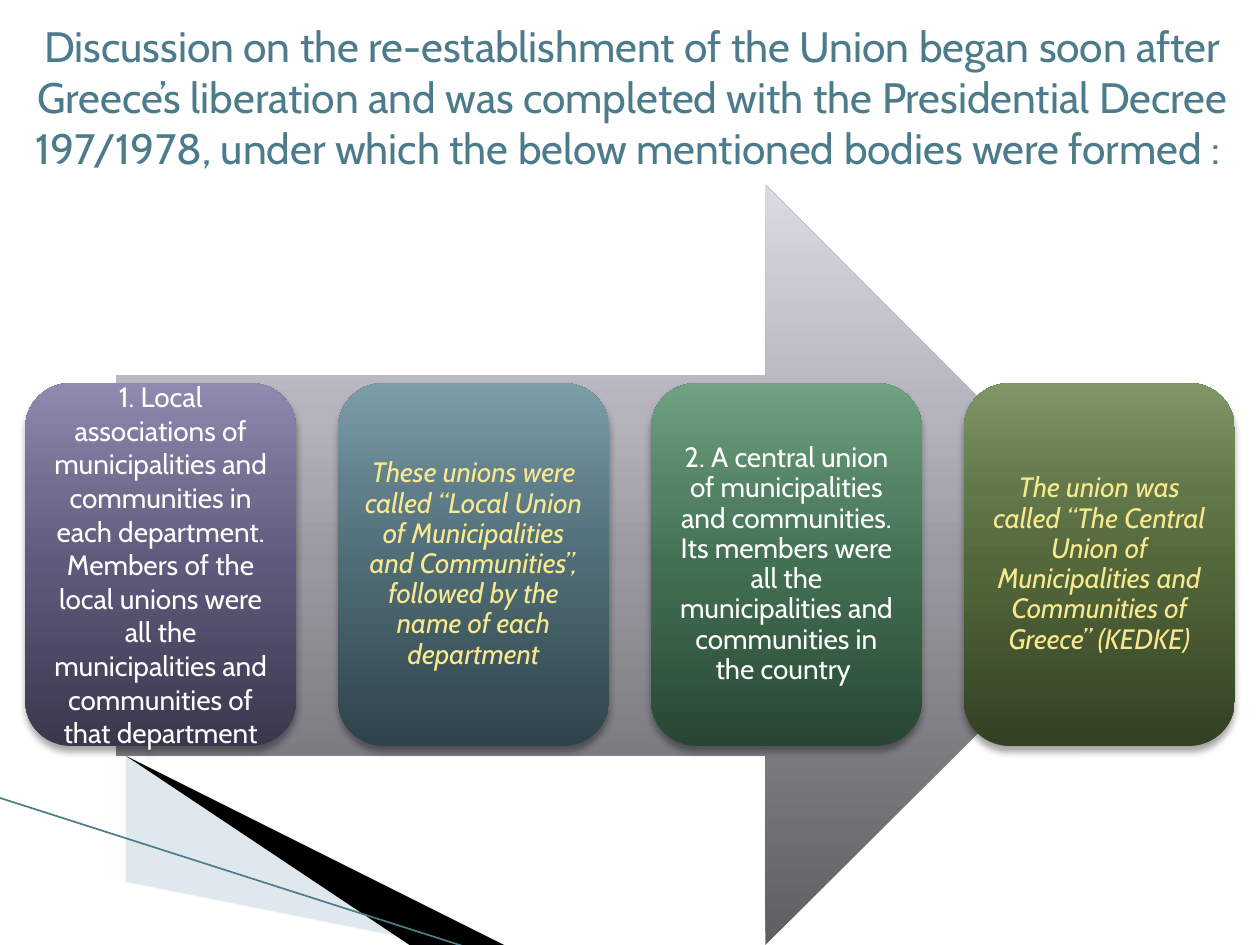
from lxml import etree
from pptx import Presentation
from pptx.dml.color import RGBColor
from pptx.enum import shapes, text
from pptx.oxml import ns
from pptx.util import Inches, Pt

FONT = "Cabin"
TITLE = ("Discussion on the re-establishment of the Union began soon after "
         "Greece’s liberation and was completed with the Presidential Decree "
         "197/1978, under which the below mentioned bodies were formed : ")
STOPS = (0, 50, 70, 100)
ARROW_COLOURS = ("5F5E63", "9998A0", "B5B3BC", "DBDAE4")
WHITE, YELLOW = "FFFFFF", "F9E98E"
# text, text colour, italic, line spacing, gradient colours from bottom to top
CARDS = [
    ("1. Local associations of municipalities and communities in each department. "
     "Members of the local unions were all the municipalities and communities of "
     "that department",
     WHITE, False, 1.0, ("3A374D", "5F5A7B", "726D8F", "908AB0")),
    ("These unions were called “Local Union of Municipalities and Communities”, "
     "followed by the name of each department",
     YELLOW, True, 0.9, ("30434A", "4E6C75", "607E89", "7C9EA9")),
    ("2. A central union of municipalities and communities. Its members were all "
     "the municipalities and communities in the country ",
     WHITE, False, 0.9, ("284633", "427053", "538264", "6FA280")),
    ("The union was called “The Central Union of Municipalities and Communities "
     "of Greece” (KEDKE)",
     YELLOW, True, 0.9, ("334124", "53673B", "63784A", "7F9666")),
]
CARD_LEFT, CARD_TOP, CARD_WIDTH, CARD_HEIGHT = 0.2, 3.04, 2.15, 2.88
CARDS_RIGHT = 9.8
# points, colour, opacity in percent
WEDGES = [
    ([(0.55, 6.51), (5.95, 7.51), (4.56, 7.51), (0.55, 6.5)], "B1C9D2", 40),
    ([(0.53, 6.49), (4.57, 7.51), (3.72, 7.52), (0.54, 6.5)], "000000", 100),
]


def rgb(colour):
    return RGBColor.from_string(colour)


def add_element(parent, tag, **attributes):
    child = etree.SubElement(parent, ns.qn(tag))
    for name, value in attributes.items():
        child.set(name, str(value))
    return child


def fill_gradient(shape, colours):
    """Fill with a gradient running from the bottom to the top."""
    shape.fill.gradient()
    shape.fill.gradient_angle = 90
    stop_list = shape.fill._fill._gradFill.find(ns.qn("a:gsLst"))
    for stop in list(stop_list):
        stop_list.remove(stop)
    for position, colour in zip(STOPS, colours):
        stop = add_element(stop_list, "a:gs", pos=position * 1000)
        add_element(stop, "a:srgbClr", val=colour)
    shape.line.fill.background()
    shape.shadow.inherit = False


def add_shadow(shape):
    effects = shape._element.spPr.find(ns.qn("a:effectLst"))
    shadow = add_element(effects, "a:outerShdw", blurRad=Pt(4), dist=Pt(3),
                         dir=90 * 60000, rotWithShape=0)
    colour = add_element(shadow, "a:srgbClr", val="000000")
    add_element(colour, "a:alpha", val=35000)


def write_text(frame, words, size, colour, italic=False, spacing=None):
    frame.word_wrap = True
    frame.auto_size = text.MSO_AUTO_SIZE.NONE
    frame.vertical_anchor = text.MSO_ANCHOR.MIDDLE
    para = frame.paragraphs[0]
    para.alignment = text.PP_ALIGN.CENTER
    para.line_spacing = spacing
    span = para.add_run()
    span.text = words
    span.font.name = FONT
    span.font.size = Pt(size)
    span.font.italic = italic
    span.font.color.rgb = rgb(colour)


def add_wedge(page, points, colour, opacity):
    builder = page.shapes.build_freeform(*points[0], scale=Inches(1))
    builder.add_line_segments(points[1:], close=True)
    wedge = builder.convert_to_shape()
    wedge.fill.solid()
    wedge.fill.fore_color.rgb = rgb(colour)
    if opacity < 100:
        fill = wedge._element.spPr.find(ns.qn("a:solidFill"))
        add_element(fill[0], "a:alpha", val=opacity * 1000)
    wedge.line.fill.background()
    wedge.shadow.inherit = False


def add_edge_line(page):
    line = page.shapes.add_connector(
        shapes.MSO_CONNECTOR.STRAIGHT,
        Inches(-0.01), Inches(6.33), Inches(3.71), Inches(7.52))
    line.line.color.rgb = rgb("4C7C8B")
    line.line.width = Pt(0.95)
    add_element(line._element.spPr, "a:effectLst")


def add_cards(page):
    step = (CARDS_RIGHT - CARD_WIDTH - CARD_LEFT) / (len(CARDS) - 1)
    for index, (words, colour, italic, spacing, gradient) in enumerate(CARDS):
        card = page.shapes.add_shape(
            shapes.MSO_SHAPE.ROUNDED_RECTANGLE,
            Inches(CARD_LEFT + index * step), Inches(CARD_TOP),
            Inches(CARD_WIDTH), Inches(CARD_HEIGHT))
        fill_gradient(card, gradient)
        add_shadow(card)
        frame = card.text_frame
        frame.margin_left = frame.margin_right = Inches(0.07)
        frame.margin_top = frame.margin_bottom = Inches(0.07)
        write_text(frame, words, 16, colour, italic, spacing)


def main():
    deck = Presentation()
    deck.slide_width, deck.slide_height = Inches(10), Inches(7.5)
    page = deck.slides.add_slide(deck.slide_layouts[5])

    for wedge in WEDGES:
        add_wedge(page, *wedge)
    add_edge_line(page)

    arrow = page.shapes.add_shape(
        shapes.MSO_SHAPE.RIGHT_ARROW,
        Inches(0.92), Inches(1.47), Inches(8.17), Inches(6.03))
    fill_gradient(arrow, ARROW_COLOURS)
    add_cards(page)

    title = page.shapes.title
    title.left, title.top = Inches(0.08), Inches(0.14)
    title.width, title.height = Inches(9.88), Inches(1.25)
    write_text(title.text_frame, TITLE, 24.3, "4C7C8B")

    deck.save("out.pptx")


if __name__ == "__main__":
    main()
